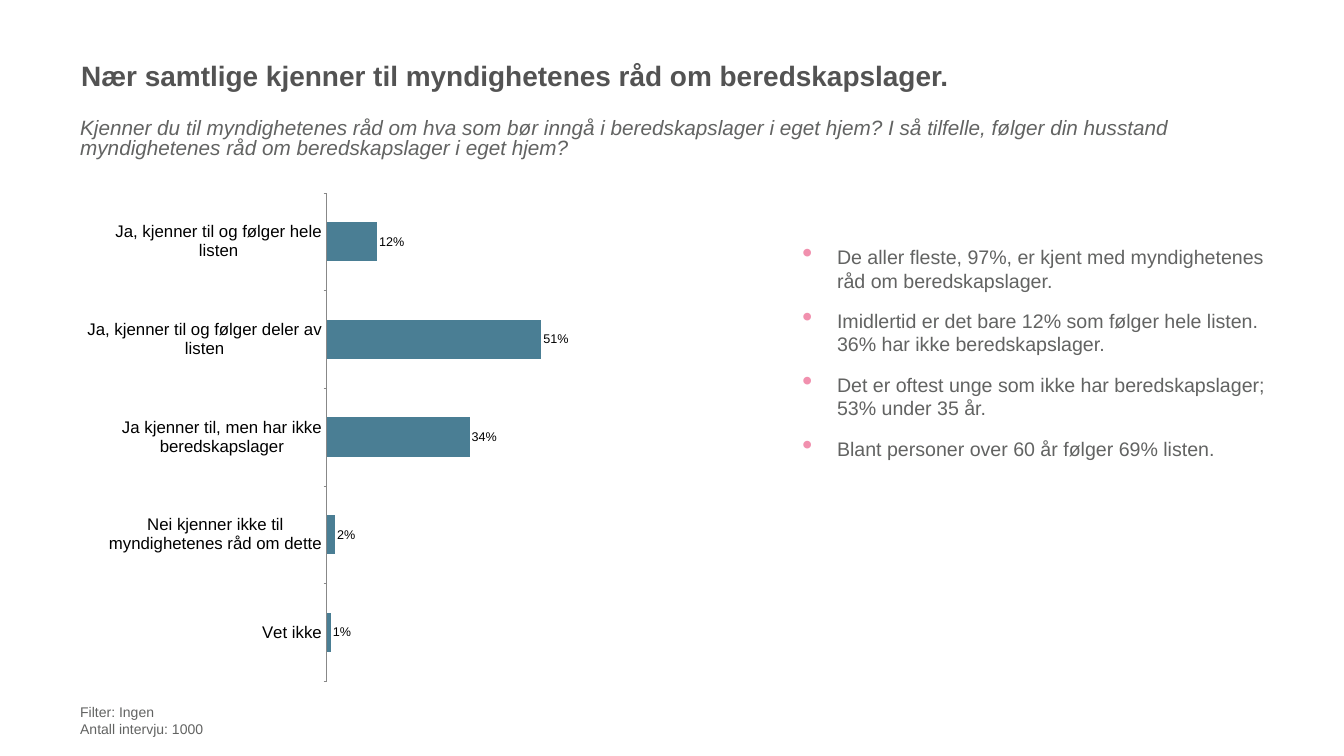
from dataclasses import dataclass

from lxml.etree import SubElement
from pptx import Presentation
from pptx.chart.data import CategoryChartData
from pptx.dml.color import RGBColor
from pptx.enum.chart import (XL_CHART_TYPE, XL_LABEL_POSITION, XL_TICK_LABEL_POSITION,
                             XL_TICK_MARK)
from pptx.enum.text import MSO_ANCHOR
from pptx.oxml.ns import qn
from pptx.util import Inches, Pt


@dataclass(frozen=True)
class Theme:
    face: str = "Arial"
    head: str = "535353"
    body: str = "626362"
    ink: str = "000000"
    bar: str = "4A7E94"
    axis: str = "888888"
    dot: str = "F190AE"
    title: float = 40
    lead: float = 29.6
    point: float = 28
    label: float = 24
    note: float = 20
    value: float = 18


THEME = Theme()
WIDE, HIGH = Inches(26.67), Inches(15)
LEFT = 5.74

ANSWERS = {
    "Ja, kjenner til og følger hele listen": 0.12,
    "Ja, kjenner til og følger deler av listen": 0.51,
    "Ja kjenner til, men har ikke beredskapslager": 0.34,
    "Nei kjenner ikke til myndighetenes råd om dette": 0.02,
    "Vet ikke": 0.01,
}
POINTS = [
    "De aller fleste, 97%, er kjent med myndighetenes råd om beredskapslager.",
    "Imidlertid er det bare 12% som følger hele listen. 36% har ikke beredskapslager.",
    "Det er oftest unge som ikke har beredskapslager; 53% under 35 år.",
    "Blant personer over 60 år følger 69% listen.",
]


def place(x, y, w, h):
    """Turn percentages of the slide into lengths."""
    return [round(part * full / 100)
            for part, full in zip((x, y, w, h), (WIDE, HIGH, WIDE, HIGH))]


def style(font, size, color):
    font.name, font.size = THEME.face, Pt(size)
    font.color.rgb = RGBColor.from_string(color)


def add_text(slide, area, lines, size, color=THEME.body, anchor=MSO_ANCHOR.TOP):
    """Add a text box and return its paragraphs."""
    frame = slide.shapes.add_textbox(*place(*area)).text_frame
    frame.word_wrap = True
    frame.vertical_anchor = anchor
    frame.margin_left = frame.margin_right = Inches(0.06)
    frame.margin_top = frame.margin_bottom = Inches(0.06)
    frame.text = "\n".join(lines)
    for para in frame.paragraphs:
        style(para.font, size, color)
    return frame.paragraphs


def add_dot(para):
    props = para._p.get_or_add_pPr()
    props.set("marL", str(Inches(0.69)))
    props.set("indent", str(-Inches(0.69)))
    tint = SubElement(props, qn("a:buClr"))
    SubElement(tint, qn("a:srgbClr"), val=THEME.dot)
    SubElement(props, qn("a:buSzPct"), val="150000")
    SubElement(props, qn("a:buChar"), char="•")


def add_points(slide, area, lines):
    paras = add_text(slide, area, lines, THEME.point)
    for spot, para in enumerate(paras):
        # Bullet elements come before the default run properties.
        font = para._p.pPr.find(qn("a:defRPr"))
        if font is not None:
            para._p.pPr.remove(font)
        add_dot(para)
        style(para.font, THEME.point, THEME.body)
        para.space_before = Pt(18 if spot else 0)
        para.space_after = Pt(6)


def set_plot(chart, **shares):
    """Fix the inner plot area as shares of the chart."""
    area = chart._chartSpace.chart.plotArea
    old = area.find(qn("c:layout"))
    if old is not None:
        area.remove(old)
    layout = SubElement(area, qn("c:layout"))
    area.insert(0, layout)
    manual = SubElement(layout, qn("c:manualLayout"))
    parts = dict(layoutTarget="inner", xMode="edge", yMode="edge", **shares)
    for name, value in parts.items():
        SubElement(manual, qn(f"c:{name}"), val=str(value))


def add_bars(slide, area, answers):
    data = CategoryChartData(number_format="0%")
    data.categories = list(answers)
    data.add_series("Series 1", list(answers.values()))
    chart = slide.shapes.add_chart(XL_CHART_TYPE.BAR_CLUSTERED, *place(*area), data).chart
    style(chart.font, THEME.label, THEME.ink)
    chart.has_legend = chart.has_title = False
    set_plot(chart, x=0.35, y=0.05, w=0.59, h=0.94)

    names = chart.category_axis
    names.reverse_order = True
    names.major_tick_mark = XL_TICK_MARK.OUTSIDE
    names.tick_label_position = XL_TICK_LABEL_POSITION.NEXT_TO_AXIS
    names.format.line.color.rgb = RGBColor.from_string(THEME.axis)
    names.format.line.width = Pt(0.75)
    style(names.tick_labels.font, THEME.label, THEME.ink)

    scale = chart.value_axis
    scale.minimum_scale, scale.maximum_scale = 0, 1
    scale.has_major_gridlines = False
    scale.visible = False

    plot = chart.plots[0]
    plot.gap_width, plot.overlap = 150, -20
    plot.vary_by_categories = False
    fill = plot.series[0].format.fill
    fill.solid()
    fill.fore_color.rgb = RGBColor.from_string(THEME.bar)
    labels = plot.series[0].data_labels
    labels.show_value = True
    labels.position = XL_LABEL_POSITION.OUTSIDE_END
    labels.number_format, labels.number_format_is_linked = "0%", False
    style(labels.font, THEME.value, THEME.ink)


def main():
    deck = Presentation()
    deck.slide_width, deck.slide_height = WIDE, HIGH
    slide = deck.slides.add_slide(deck.slide_layouts[6])

    title = add_text(slide, (5.81, 5.87, 88.71, 8.13),
                     ["Nær samtlige kjenner til myndighetenes råd om beredskapslager."],
                     THEME.title, THEME.head, MSO_ANCHOR.MIDDLE)[0]
    title.font.bold = True

    lead = add_text(slide, (LEFT, 15.4, 88.71, 6.73),
                    ["Kjenner du til myndighetenes råd om hva som bør inngå i beredskapslager "
                     "i eget hjem? I så tilfelle, følger din husstand myndighetenes råd om "
                     "beredskapslager i eget hjem?"], THEME.lead)[0]
    lead.font.italic = True
    lead.line_spacing = 0.8
    lead.space_after = Pt(6)

    add_text(slide, (LEFT, 92.67, 87.59, 5.33),
             ["Filter: Ingen", "Antall intervju: 1000"], THEME.note)
    add_bars(slide, (LEFT, 22.07, 53.06, 68.73), ANSWERS)
    add_points(slide, (59.47, 32, 35.06, 58.87), POINTS)
    deck.save("out.pptx")


if __name__ == "__main__":
    main()
